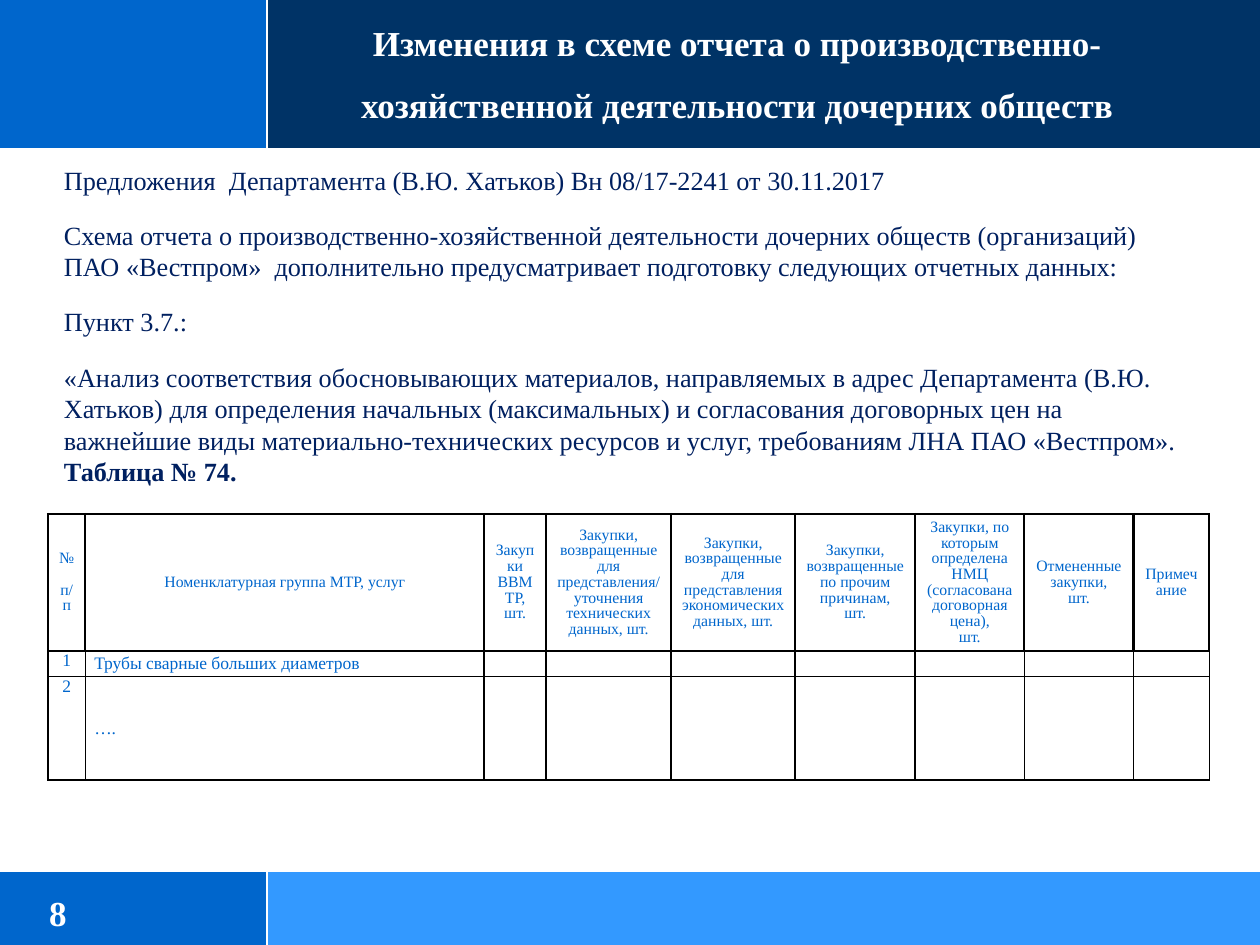
from lxml.etree import SubElement
from pptx import Presentation
from pptx.dml.color import RGBColor
from pptx.enum.shapes import MSO_CONNECTOR, MSO_SHAPE
from pptx.enum.text import MSO_ANCHOR, PP_ALIGN
from pptx.oxml.ns import qn
from pptx.util import Cm, Pt

WIDTH, HEIGHT = 25.4, 19.05
SPLIT, HEADER, FOOTER_TOP = 5.38, 3, 17.55
WHITE, BLACK, NAVY, BLUE, SKY, INK = (
    "FFFFFF", "000000", "003366", "0066CC", "3399FF", "002060")

TITLE = ["Изменения в схеме отчета о производственно-",
         "хозяйственной деятельности дочерних обществ"]
BODY = [
    "Предложения  Департамента (В.Ю. Хатьков) Вн 08/17-2241 от 30.11.2017",
    "Схема отчета о производственно-хозяйственной деятельности дочерних обществ "
    "(организаций) ПАО «Вестпром»  дополнительно предусматривает подготовку "
    "следующих отчетных данных:",
    "Пункт 3.7.:",
    "«Анализ соответствия обосновывающих материалов, направляемых в адрес "
    "Департамента (В.Ю. Хатьков) для определения начальных (максимальных) и "
    "согласования договорных цен на важнейшие виды материально-технических "
    "ресурсов и услуг, требованиям ЛНА ПАО «Вестпром». ",
]
TABLE_REFERENCE = "Таблица № 74."
COLUMNS = [0.75, 8.04, 1.25, 2.52, 2.5, 2.42, 2.2, 2.2, 1.53]
ROWS = [2.77, 0.51, 2.08]
HEADINGS = [
    "№\nп/п",
    "Номенклатурная группа МТР, услуг",
    "Закупки ВВМТР, шт.",
    "Закупки, возвращенные для представления/\nуточнения технических данных, шт.",
    "Закупки, возвращенные для представления экономических данных, шт.",
    "Закупки, возвращенные по прочим причинам,\nшт.",
    "Закупки, по которым определена НМЦ (согласована договорная цена),\nшт.",
    "Отмененные закупки,\nшт.",
    "Примечание",
]
ITEMS = [["1", "Трубы сварные больших диаметров"], ["2", "…."]]


def color(value):
    return RGBColor.from_string(value)


class SlideBuilder:
    font = "Times New Roman"

    def __init__(self, slide):
        self.slide = slide

    def band(self, left, top, width, height, fill):
        shape = self.slide.shapes.add_shape(
            MSO_SHAPE.RECTANGLE, Cm(left), Cm(top), Cm(width), Cm(height))
        shape.shadow.inherit = False
        shape.fill.solid()
        shape.fill.fore_color.rgb = color(fill)
        shape.line.fill.background()

    def line(self, x1, y1, x2, y2):
        connector = self.slide.shapes.add_connector(
            MSO_CONNECTOR.STRAIGHT, Cm(x1), Cm(y1), Cm(x2), Cm(y2))
        connector.line.color.rgb = color(WHITE)
        connector.line.width = Pt(1.25)
        SubElement(connector._element.spPr, qn("a:effectLst"))

    def style(self, span, size, ink, bold=False):
        span.font.name = self.font
        span.font.size = Pt(size)
        span.font.bold = bold
        span.font.color.rgb = color(ink)

    def fill_text(self, frame, lines, size, ink, bold=False, align=PP_ALIGN.LEFT,
                  before=0, after=0, spacing=None):
        """Fill a text frame, one paragraph a line; only later ones get space before."""
        frame.text = "\n".join(lines)
        for index, para in enumerate(frame.paragraphs):
            para.alignment = align
            para.space_before = Pt(before if index else 0)
            para.space_after = Pt(after)
            if spacing:
                para.line_spacing = spacing
            for span in para.runs:
                self.style(span, size, ink, bold)

    def text(self, left, top, width, height, lines, size, ink, wrap=True,
             anchor=MSO_ANCHOR.TOP, inset=True, **options):
        box = self.slide.shapes.add_textbox(Cm(left), Cm(top), Cm(width), Cm(height))
        frame = box.text_frame
        frame.word_wrap = wrap
        frame.vertical_anchor = anchor
        if not inset:
            frame.margin_left = frame.margin_right = Cm(0)
            frame.margin_top = frame.margin_bottom = Cm(0)
        self.fill_text(frame, lines, size, ink, **options)
        return frame

    def borders(self, cell, width, top_width):
        properties = cell._tc.get_or_add_tcPr()
        for position, side in enumerate(("lnL", "lnR", "lnT", "lnB")):
            border = properties.makeelement(qn(f"a:{side}"))
            border.set("w", str(Pt(top_width if side == "lnT" else width)))
            fill = SubElement(border, qn("a:solidFill"))
            SubElement(fill, qn("a:srgbClr")).set("val", BLACK)
            properties.insert(position, border)

    def cell(self, cell, content, size, anchor, width, top_width, **options):
        cell.fill.solid()
        cell.fill.fore_color.rgb = color(WHITE)
        cell.vertical_anchor = anchor
        cell.margin_left = cell.margin_right = Cm(0.18)
        cell.margin_top = cell.margin_bottom = Cm(0)
        self.borders(cell, width, top_width)
        self.fill_text(cell.text_frame, content.split("\n"), size, BLUE, **options)
        if not content:
            end = cell.text_frame.paragraphs[0]._p.get_or_add_endParaRPr()
            end.set("sz", str(size * 100))

    def table(self, left, top):
        table = self.slide.shapes.add_table(
            len(ROWS), len(COLUMNS), Cm(left), Cm(top),
            Cm(sum(COLUMNS)), Cm(sum(ROWS))).table
        table.first_row = table.horz_banding = False
        for column, width in zip(table.columns, COLUMNS):
            column.width = Cm(width)
        for row, height in zip(table.rows, ROWS):
            row.height = Cm(height)
        for index, heading in enumerate(HEADINGS):
            self.cell(table.cell(0, index), heading, 9, MSO_ANCHOR.MIDDLE, 1.5, 1.5,
                      align=PP_ALIGN.CENTER, spacing=0.9,
                      before=0 if index else 9)
        for row, item in enumerate(ITEMS, start=1):
            for index in range(len(COLUMNS)):
                content = item[index] if index < len(item) else ""
                self.cell(table.cell(row, index), content, 10,
                          MSO_ANCHOR.MIDDLE if index else MSO_ANCHOR.TOP,
                          1, 1.5 if row == 1 else 1,
                          align=PP_ALIGN.LEFT if index else PP_ALIGN.CENTER)


def main():
    deck = Presentation()
    deck.slide_width, deck.slide_height = Cm(WIDTH), Cm(HEIGHT)
    page = SlideBuilder(deck.slides.add_slide(deck.slide_layouts[6]))

    for top, height, fill in ((FOOTER_TOP, HEIGHT - FOOTER_TOP, SKY), (0, HEADER, NAVY)):
        page.band(0, top, SPLIT, height, BLUE)
        page.band(SPLIT, top, WIDTH - SPLIT, height, fill)
        page.line(SPLIT, top, SPLIT, top + height)
    for edge in (FOOTER_TOP, HEADER):
        page.line(0, edge, WIDTH, edge)

    body = page.text(1.04, 3.18, 23.24, 6.99, BODY, 15, INK, before=7.5, after=6)
    reference = body.paragraphs[-1].add_run()
    reference.text = TABLE_REFERENCE
    page.style(reference, 15, INK, bold=True)

    page.text(0.99, 17.73, 4.14, 1.32, ["8"], 20, WHITE, bold=True,
              anchor=MSO_ANCHOR.MIDDLE, inset=False)
    page.text(6.99, 0.3, 15.75, 2.39, TITLE, 20, WHITE, bold=True, wrap=False,
              align=PP_ALIGN.CENTER, before=11.5)
    page.table(0.97, 10.36)
    deck.save("out.pptx")


if __name__ == "__main__":
    main()
